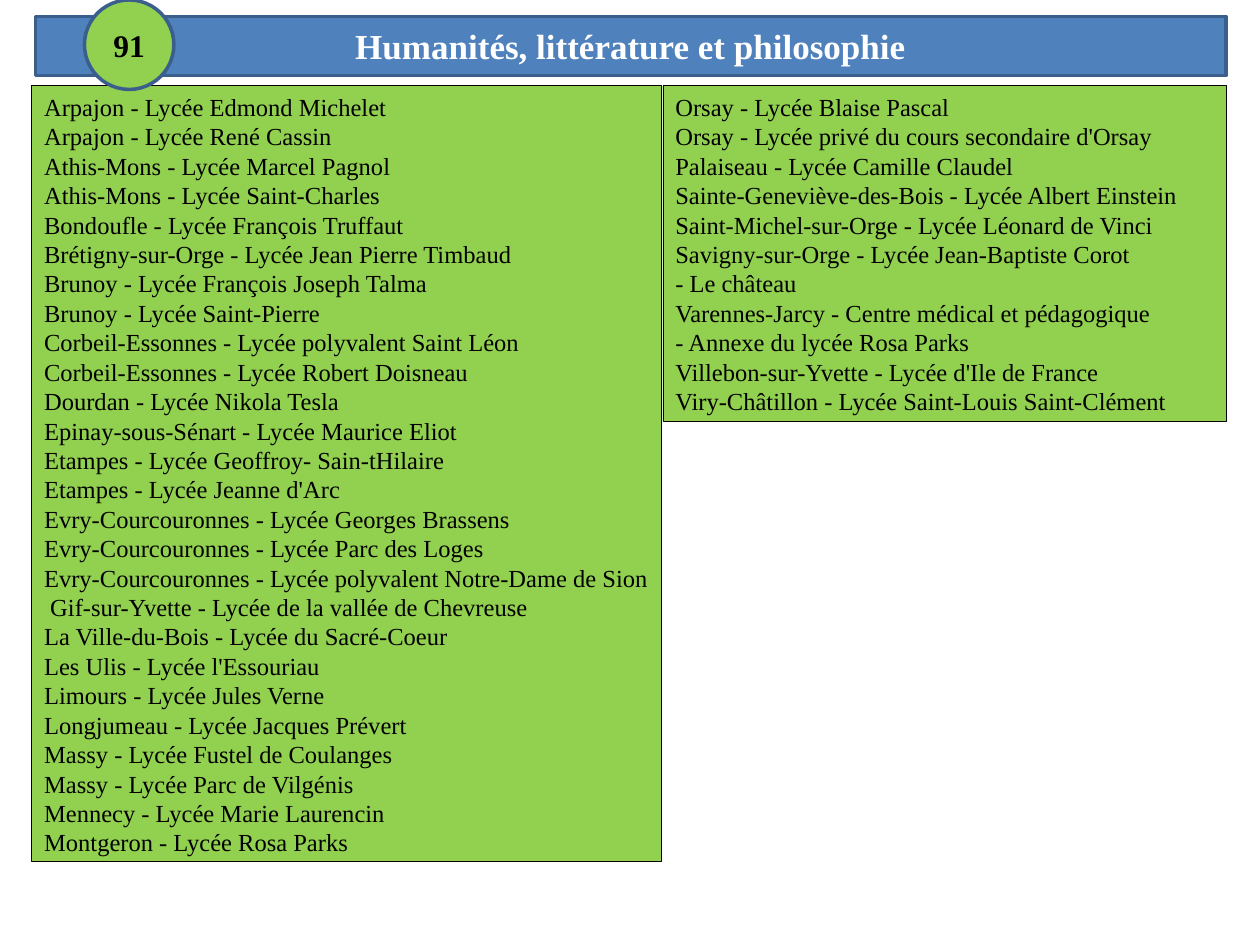
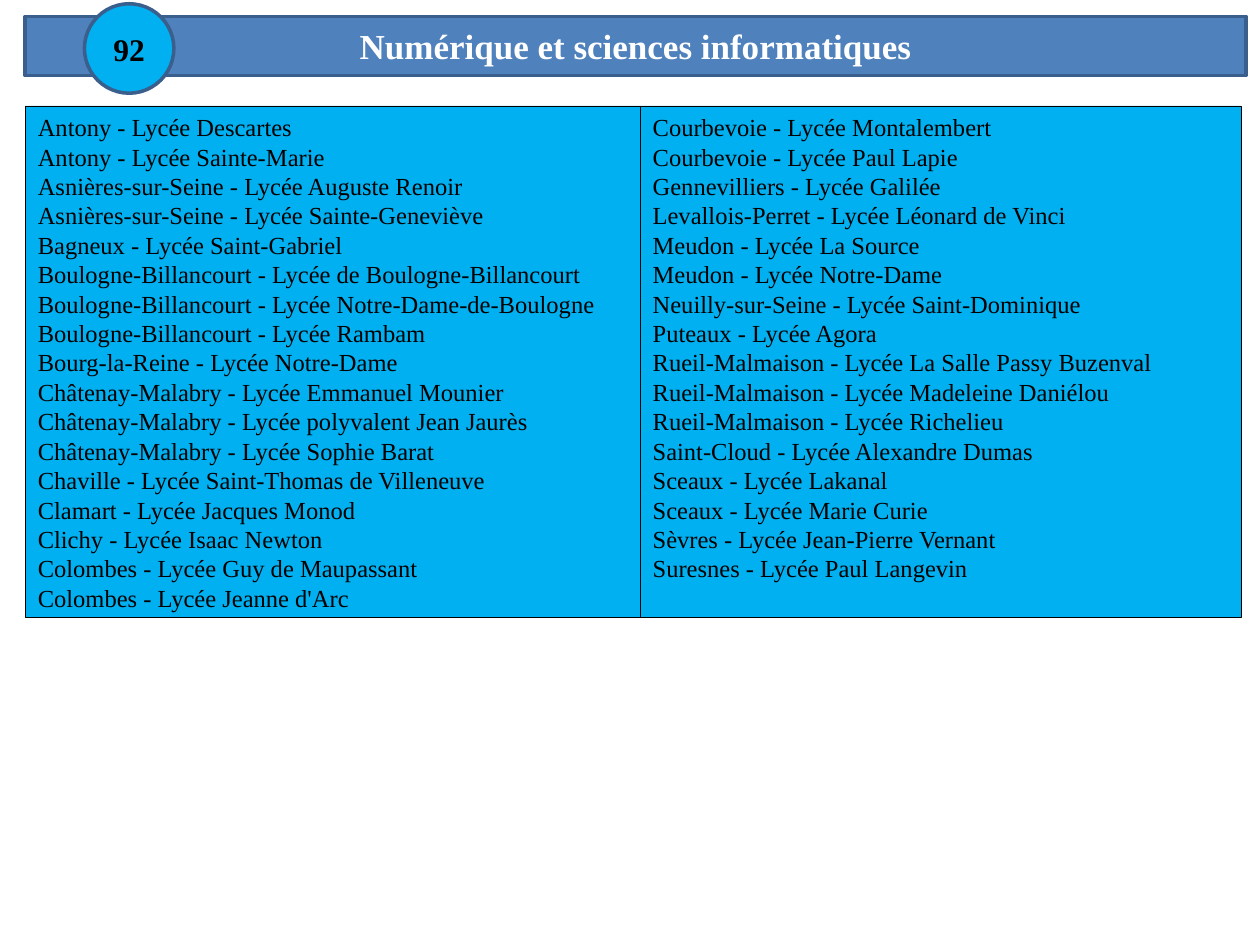
"""Build two slides listing the schools that offer a speciality, one slide per department."""
from lxml.etree import SubElement
from pptx import Presentation
from pptx.dml.color import RGBColor
from pptx.enum.shapes import MSO_SHAPE as Shape
from pptx.enum.text import MSO_ANCHOR as Anchor, MSO_AUTO_SIZE as AutoSize, PP_ALIGN as Align
from pptx.oxml.ns import qn
from pptx.util import Inches, Pt

COLORS = {
    "band": "4F81BD",
    "outline": "3A5F8C",
    "essonne": "92D050",
    "hauts_de_seine": "00B0F0",
    "light": "FFFFFF",
    "dark": "000000",
}
FONT = "Times New Roman"
TWO_CONTENT_LAYOUT = 3
BAND_TOP, BAND_HEIGHT = 0.13, 0.47
BADGE_LEFT, BADGE_SIZE = 0.67, 0.71
ROW_HEIGHT = 0.233
INSET_X, INSET_Y = 0.1, 0.05

DEPARTMENTS = [
    {
        "title": "Humanités, littérature et philosophie",
        "number": "91",
        "color": "essonne",
        "band": (0.28, 9.45),
        "badge_top": 0,
        "lists_top": 0.68,
        "columns": [
            {"left": 0.25, "width": 5, "rows": 26, "schools": [
                "Arpajon - Lycée Edmond Michelet",
                "Arpajon - Lycée René Cassin",
                "Athis-Mons - Lycée Marcel Pagnol",
                "Athis-Mons - Lycée Saint-Charles",
                "Bondoufle - Lycée François Truffaut",
                "Brétigny-sur-Orge - Lycée Jean Pierre Timbaud",
                "Brunoy - Lycée François Joseph Talma",
                "Brunoy - Lycée Saint-Pierre",
                "Corbeil-Essonnes - Lycée polyvalent Saint Léon",
                "Corbeil-Essonnes - Lycée Robert Doisneau",
                "Dourdan - Lycée Nikola Tesla",
                "Epinay-sous-Sénart - Lycée Maurice Eliot",
                "Etampes - Lycée Geoffroy- Sain-tHilaire",
                "Etampes - Lycée Jeanne d'Arc",
                "Evry-Courcouronnes - Lycée Georges Brassens",
                "Evry-Courcouronnes - Lycée Parc des Loges",
                "Evry-Courcouronnes - Lycée polyvalent Notre-Dame de Sion\v"
                " Gif-sur-Yvette - Lycée de la vallée de Chevreuse",
                "La Ville-du-Bois - Lycée du Sacré-Coeur",
                "Les Ulis - Lycée l'Essouriau",
                "Limours - Lycée Jules Verne",
                "Longjumeau - Lycée Jacques Prévert",
                "Massy - Lycée Fustel de Coulanges",
                "Massy - Lycée Parc de Vilgénis",
                "Mennecy - Lycée Marie Laurencin",
                "Montgeron - Lycée Rosa Parks",
            ]},
            {"left": 5.26, "width": 4.47, "rows": 11, "schools": [
                "Orsay - Lycée Blaise Pascal",
                "Orsay - Lycée privé du cours secondaire d'Orsay",
                "Palaiseau - Lycée Camille Claudel",
                "Sainte-Geneviève-des-Bois - Lycée Albert Einstein",
                "Saint-Michel-sur-Orge - Lycée Léonard de Vinci",
                "Savigny-sur-Orge - Lycée Jean-Baptiste Corot",
                "- Le château",
                "Varennes-Jarcy - Centre médical et pédagogique",
                "- Annexe du lycée Rosa Parks",
                "Villebon-sur-Yvette - Lycée d'Ile de France",
                "Viry-Châtillon - Lycée Saint-Louis Saint-Clément",
            ]},
        ],
    },
    {
        "title": "Numérique et sciences informatiques",
        "number": "92",
        "color": "hauts_de_seine",
        "band": (0.2, 9.69),
        "badge_top": 0.03,
        "lists_top": 0.84,
        "columns": [
            {"left": 0.2, "width": 4.88, "rows": 17, "schools": [
                "Antony - Lycée Descartes",
                "Antony - Lycée Sainte-Marie",
                "Asnières-sur-Seine - Lycée Auguste Renoir",
                "Asnières-sur-Seine - Lycée Sainte-Geneviève",
                "Bagneux - Lycée Saint-Gabriel",
                "Boulogne-Billancourt - Lycée de Boulogne-Billancourt",
                "Boulogne-Billancourt - Lycée Notre-Dame-de-Boulogne",
                "Boulogne-Billancourt - Lycée Rambam",
                "Bourg-la-Reine - Lycée Notre-Dame",
                "Châtenay-Malabry - Lycée Emmanuel Mounier",
                "Châtenay-Malabry - Lycée polyvalent Jean Jaurès",
                "Châtenay-Malabry - Lycée Sophie Barat",
                "Chaville - Lycée Saint-Thomas de Villeneuve",
                "Clamart - Lycée Jacques Monod",
                "Clichy - Lycée Isaac Newton",
                "Colombes - Lycée Guy de Maupassant",
                "Colombes - Lycée Jeanne d'Arc",
            ]},
            {"left": 5.08, "width": 4.77, "rows": 17, "schools": [
                "Courbevoie - Lycée Montalembert",
                "Courbevoie - Lycée Paul Lapie",
                "Gennevilliers - Lycée Galilée",
                "Levallois-Perret - Lycée Léonard de Vinci",
                "Meudon - Lycée La Source",
                "Meudon - Lycée Notre-Dame",
                "Neuilly-sur-Seine - Lycée Saint-Dominique",
                "Puteaux - Lycée Agora",
                "Rueil-Malmaison - Lycée La Salle Passy Buzenval",
                "Rueil-Malmaison - Lycée Madeleine Daniélou",
                "Rueil-Malmaison - Lycée Richelieu",
                "Saint-Cloud - Lycée Alexandre Dumas",
                "Sceaux - Lycée Lakanal",
                "Sceaux - Lycée Marie Curie",
                "Sèvres - Lycée Jean-Pierre Vernant",
                "Suresnes - Lycée Paul Langevin",
            ]},
        ],
    },
]


def rgb(name):
    return RGBColor.from_string(COLORS[name])


def place(shape, left, top, width, height):
    shape.left, shape.top = Inches(left), Inches(top)
    shape.width, shape.height = Inches(width), Inches(height)


def paint(shape, fill, line, line_width):
    shape.fill.solid()
    shape.fill.fore_color.rgb = rgb(fill)
    shape.line.color.rgb = rgb(line)
    shape.line.width = Pt(line_width)


def write(shape, text, size, color="dark", bold=False, align=Align.CENTER, anchor=Anchor.MIDDLE):
    frame = shape.text_frame
    frame.text = text
    frame.word_wrap = True
    frame.auto_size = AutoSize.NONE
    frame.vertical_anchor = anchor
    frame.margin_left = frame.margin_right = Inches(INSET_X)
    frame.margin_top = frame.margin_bottom = Inches(INSET_Y)
    for para in frame.paragraphs:
        para.alignment = align
        para.space_before = Pt(0)
        for span in para.runs:
            span.font.name = FONT
            span.font.size = Pt(size)
            span.font.bold = bold
            span.font.color.rgb = rgb(color)


def add_band(page, department):
    band = page.shapes.title
    left, width = department["band"]
    place(band, left, BAND_TOP, width, BAND_HEIGHT)
    outline = SubElement(band.element.spPr, qn("a:prstGeom"), prst="roundRect")
    SubElement(outline, qn("a:avLst"))
    paint(band, "band", "outline", 2)
    write(band, department["title"], 20, color="light", bold=True)


def fill_list(box, column, top, color):
    height = column["rows"] * ROW_HEIGHT + 2 * INSET_Y
    place(box, column["left"], top, column["width"], height)
    paint(box, color, "dark", 0.25)
    write(box, "\n".join(column["schools"]), 14, align=Align.LEFT, anchor=Anchor.TOP)
    for para in box.text_frame.paragraphs:
        properties = para._p.get_or_add_pPr()
        properties.set("marL", "0")
        properties.set("indent", "0")
        SubElement(properties, qn("a:buNone"))


def add_badge(page, department):
    badge = page.shapes.add_shape(
        Shape.OVAL, Inches(BADGE_LEFT), Inches(department["badge_top"]),
        Inches(BADGE_SIZE), Inches(BADGE_SIZE))
    badge.shadow.inherit = False
    paint(badge, department["color"], "outline", 2)
    write(badge, department["number"], 18, bold=True)


def main():
    deck = Presentation()
    deck.slide_width, deck.slide_height = Inches(10), Inches(7.5)
    for department in DEPARTMENTS:
        page = deck.slides.add_slide(deck.slide_layouts[TWO_CONTENT_LAYOUT])
        add_band(page, department)
        for index, column in enumerate(department["columns"], start=1):
            fill_list(page.placeholders[index], column, department["lists_top"], department["color"])
        add_badge(page, department)
    deck.save("out.pptx")


if __name__ == "__main__":
    main()
